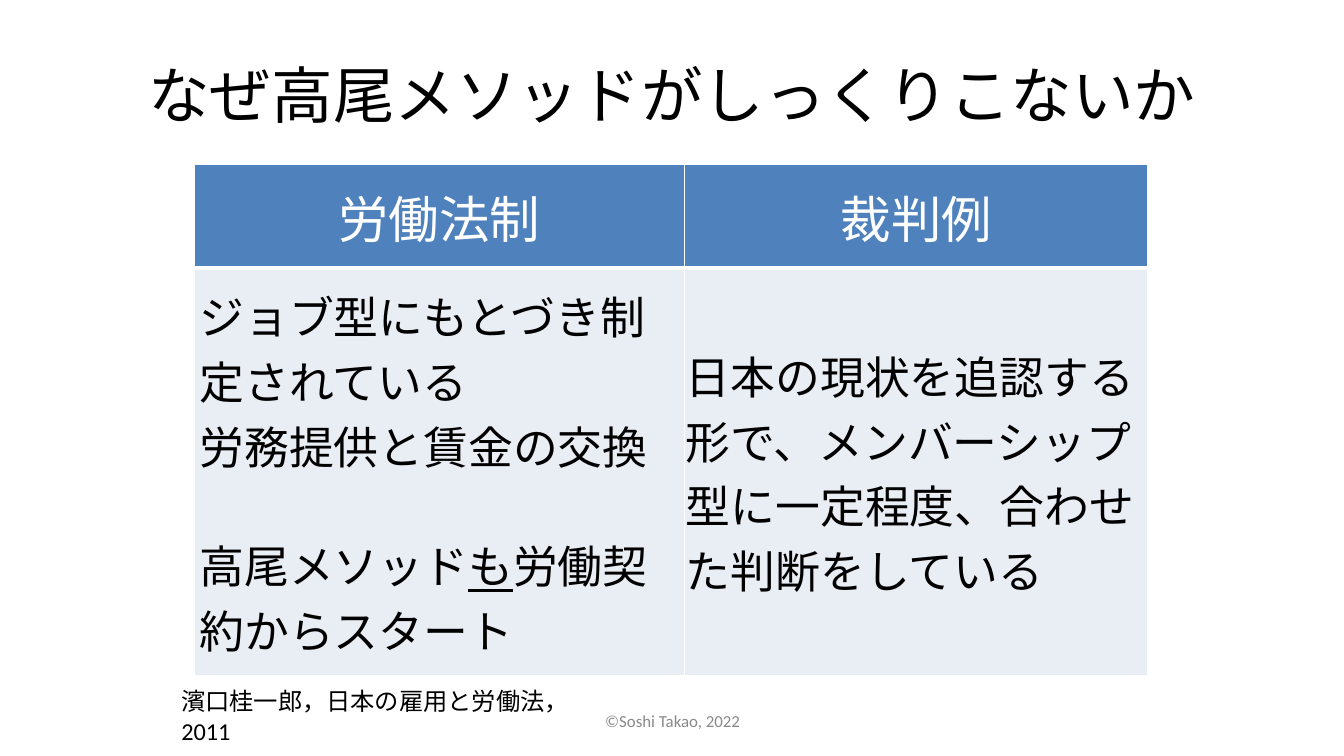
from dataclasses import dataclass, replace

import pptx
import pptx.dml.color
import pptx.enum.lang
import pptx.enum.text
import pptx.oxml
import pptx.oxml.ns
import pptx.util

Pt = pptx.util.Pt
RGBColor = pptx.dml.color.RGBColor
Align = pptx.enum.text.PP_ALIGN
Anchor = pptx.enum.text.MSO_ANCHOR

BLACK = RGBColor(0x00, 0x00, 0x00)
WHITE = RGBColor(0xFF, 0xFF, 0xFF)
GREY = RGBColor(0x89, 0x89, 0x89)
HEADER_BLUE = RGBColor(0x4F, 0x81, 0xBD)
BODY_BLUE = RGBColor(0xE9, 0xED, 0xF4)

COLUMN_WIDTHS = (262.8, 248.4)
COLUMN_INSETS = (3, 0.75)
ROW_HEIGHTS = (55.6, 218.6)
THIN, THICK = 1, 3


@dataclass(frozen=True)
class Style:
    size: float
    font: str
    color: RGBColor
    align: Align = Align.LEFT


@dataclass(frozen=True)
class Span:
    text: str
    font: str | None = None
    underline: bool = False


@dataclass(frozen=True)
class Line:
    spans: tuple[Span, ...]
    space_before: float = 0


@dataclass(frozen=True)
class Label:
    left: float
    top: float
    width: float
    height: float
    line: Line
    style: Style
    anchor: Anchor = Anchor.MIDDLE


def plain(text: str) -> Line:
    return Line((Span(text),))


HEADER = Style(27, "Roboto", WHITE, Align.CENTER)
BODY = replace(HEADER, size=24, color=BLACK, align=Align.LEFT)

LABELS = (
    Label(249.8, 378, 221, 16.6, plain("©Soshi Takao, 2022"),
          Style(9, "Calibri", GREY, Align.CENTER)),
    Label(36, 16.6, 648, 67.7, plain("なぜ高尾メソッドがしっくりこないか"),
          Style(33, "Arial", BLACK, Align.CENTER)),
    Label(93.6, 364.3, 221, 23,
          Line((Span("濱口桂一郎，日本の雇用と労働法，"), Span("2011", "Calibri"))),
          replace(BODY, size=13), Anchor.TOP),
)

TABLE_ROWS = (
    ((plain("労働法制"),), (plain("裁判例"),)),
    (
        (
            plain("ジョブ型にもとづき制定されている"),
            plain("労務提供と賃金の交換"),
            Line((Span("高尾メソッド"), Span("も", underline=True),
                  Span("労働契約からスタート")), space_before=29.3),
        ),
        (plain("日本の現状を追認する形で、メンバーシップ型に一定程度、合わせた判断をしている"),),
    ),
)


def write_lines(frame, lines: tuple[Line, ...], style: Style) -> None:
    for index, line in enumerate(lines):
        para = frame.add_paragraph() if index else frame.paragraphs[0]
        para.alignment = style.align
        para.space_before = Pt(line.space_before)
        for span in line.spans:
            run = para.add_run()
            run.text = span.text
            font = run.font
            font.size = Pt(style.size)
            font.color.rgb = style.color
            font.name = span.font or style.font
            font.language_id = pptx.enum.lang.MSO_LANGUAGE_ID.JAPANESE
            if span.underline:
                font.underline = True


def set_insets(target, inset: float) -> None:
    target.margin_left = target.margin_right = Pt(inset)
    target.margin_top = target.margin_bottom = Pt(inset)


def add_label(page, label: Label) -> None:
    box = page.shapes.add_textbox(
        Pt(label.left), Pt(label.top), Pt(label.width), Pt(label.height))
    frame = box.text_frame
    frame.word_wrap = True
    frame.vertical_anchor = label.anchor
    set_insets(frame, 3.6)
    write_lines(frame, (label.line,), label.style)


def set_borders(cell, top: float, bottom: float) -> None:
    """Draw white borders, thin at the sides."""
    properties = cell._tc.get_or_add_tcPr()
    sides = (("lnL", THIN), ("lnR", THIN), ("lnT", top), ("lnB", bottom))
    for index, (tag, width) in enumerate(sides):
        properties.insert(index, pptx.oxml.parse_xml(
            f'<a:{tag} {pptx.oxml.ns.nsdecls("a")} w="{Pt(width)}">'
            f'<a:solidFill><a:srgbClr val="{WHITE}"/></a:solidFill></a:{tag}>'))


def add_comparison_table(page) -> None:
    table = page.shapes.add_table(
        len(ROW_HEIGHTS), len(COLUMN_WIDTHS), Pt(103.9), Pt(88),
        Pt(sum(COLUMN_WIDTHS)), Pt(sum(ROW_HEIGHTS))).table
    for column, width in zip(table.columns, COLUMN_WIDTHS):
        column.width = Pt(width)
    for row_index, (row, height) in enumerate(zip(TABLE_ROWS, ROW_HEIGHTS)):
        table.rows[row_index].height = Pt(height)
        is_header = row_index == 0
        for column_index, lines in enumerate(row):
            cell = table.cell(row_index, column_index)
            cell.vertical_anchor = Anchor.MIDDLE
            set_insets(cell, COLUMN_INSETS[column_index])
            cell.fill.solid()
            cell.fill.fore_color.rgb = HEADER_BLUE if is_header else BODY_BLUE
            set_borders(cell, *((THIN, THICK) if is_header else (THICK, THIN)))
            write_lines(cell.text_frame, lines, HEADER if is_header else BODY)


def main() -> None:
    deck = pptx.Presentation()
    deck.slide_width, deck.slide_height = Pt(720), Pt(405)
    page = deck.slides.add_slide(deck.slide_layouts[6])
    for label in LABELS:
        add_label(page, label)
    add_comparison_table(page)
    deck.save("out.pptx")


if __name__ == "__main__":
    main()
